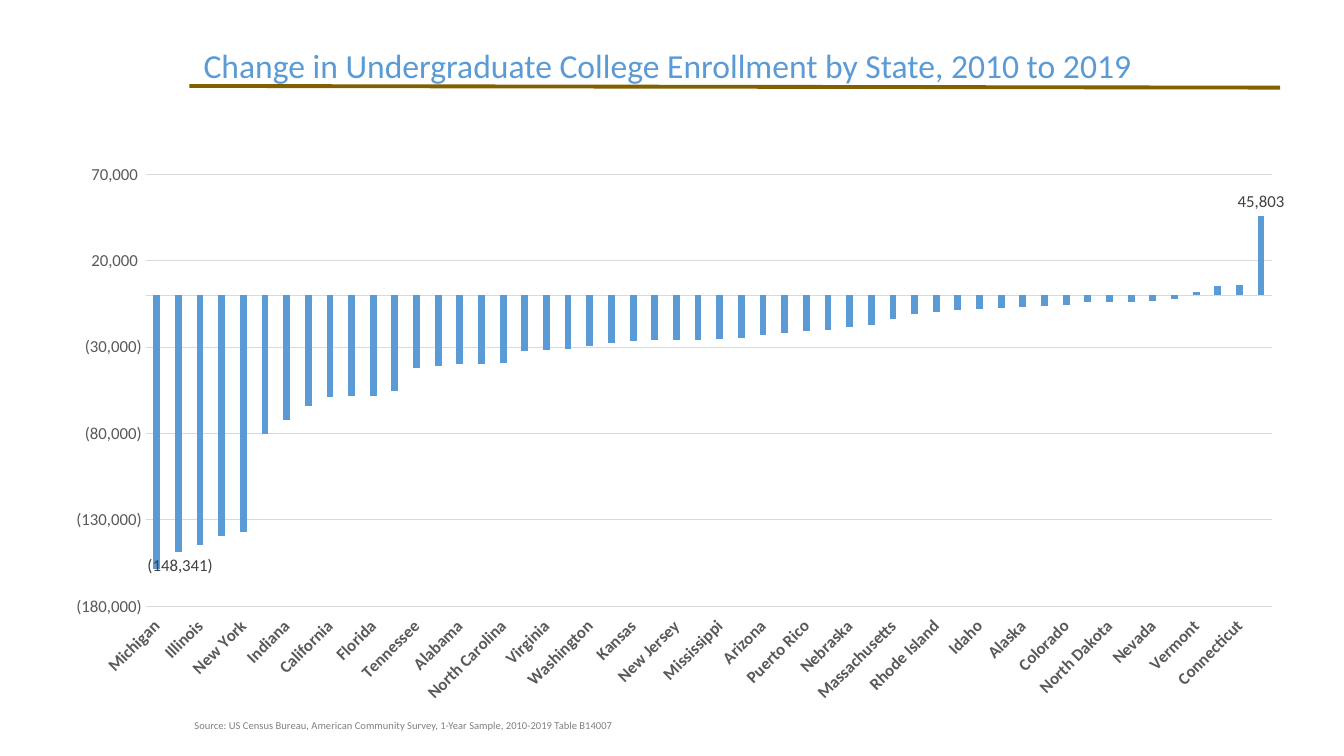
from lxml import etree
from pptx import Presentation
from pptx.chart.data import CategoryChartData
from pptx.dml.color import RGBColor
from pptx.enum.chart import (XL_CHART_TYPE, XL_LABEL_POSITION, XL_TICK_LABEL_POSITION,
                             XL_TICK_MARK)
from pptx.enum.shapes import MSO_CONNECTOR
from pptx.enum.text import MSO_ANCHOR, PP_ALIGN
from pptx.oxml import parse_xml
from pptx.oxml.ns import nsdecls, qn
from pptx.util import Pt

COLUMN = XL_CHART_TYPE.COLUMN_CLUSTERED
OUTSIDE = XL_LABEL_POSITION.OUTSIDE_END
LOW = XL_TICK_LABEL_POSITION.LOW
NO_TICK = XL_TICK_MARK.NONE
STRAIGHT = MSO_CONNECTOR.STRAIGHT
MIDDLE, LEFT = MSO_ANCHOR.MIDDLE, PP_ALIGN.LEFT

FONT = "Calibri"
BLUE, GOLD, GRID, AXIS, LABEL, SOURCE = "5B9BD5", "806000", "D9D9D9", "595959", "404040", "808080"
NUMBER_FORMAT = r'_(* #,##0_);_(* \(#,##0\);_(* "-"??_);_('
LABELLED = ("Pennsylvania", "Texas")

ENROLLMENT_CHANGE = {
    "Michigan": -158669, "Pennsylvania": -148341, "Illinois": -144688, "Ohio": -139584,
    "New York": -136700, "Missouri": -80359, "Indiana": -72352, "Minnesota": -63898,
    "California": -58865, "Wisconsin": -58341, "Florida": -58186, "Maryland": -55631,
    "Tennessee": -41985, "Georgia": -40846, "Alabama": -40001, "South Carolina": -39846,
    "North Carolina": -39470, "Oregon": -32197, "Virginia": -31666, "Oklahoma": -30966,
    "Washington": -29483, "Kentucky": -27358, "Kansas": -26217, "West Virginia": -25807,
    "New Jersey": -25658, "Iowa": -25616, "Mississippi": -25223, "New Mexico": -24777,
    "Arizona": -22903, "Arkansas": -21648, "Puerto Rico": -20970, "Louisiana": -19963,
    "Nebraska": -18534, "Hawaii": -17294, "Massachusetts": -13616, "Maine": -10666,
    "Rhode Island": -9920, "Montana": -8532, "Idaho": -7702, "Delaware": -7298,
    "Alaska": -6906, "South Dakota": -6252, "Colorado": -5921, "New Hampshire": -4078,
    "North Dakota": -4075, "Wyoming": -3716, "Nevada": -3425, "District of Columbia": -1960,
    "Vermont": 1855, "Utah": 5401, "Connecticut": 5684, "Texas": 45803,
}


def rgb(color):
    return RGBColor.from_string(color)


def set_font(font, size, color, bold=False):
    font.name, font.size, font.bold = FONT, Pt(size), bold
    font.color.rgb = rgb(color)


def set_line(line, color, width):
    line.color.rgb = rgb(color)
    line.width = Pt(width)


def add_title(s, x, y, w, h, text):
    sp = s.shapes.title
    sp.left, sp.top, sp.width, sp.height = Pt(x), Pt(y), Pt(w), Pt(h)
    tf = sp.text_frame
    tf.vertical_anchor = MIDDLE
    p = tf.paragraphs[0]
    p.alignment, p.line_spacing = LEFT, 0.9
    r = p.add_run()
    r.text = text
    set_font(r.font, 24, BLUE)
    rule = s.shapes.add_connector(STRAIGHT, Pt(x - 2.9), Pt(y + 65.2), Pt(x + 776.2), Pt(y + 66.4))
    set_line(rule.line, GOLD, 2.75)
    etree.SubElement(rule._element.spPr, qn("a:effectLst"))


def set_plot_area(chart, x, y, w, h):
    """Place the inner plot area, in fractions of the chart's box."""
    plot_area = chart._chartSpace.chart.plotArea
    for old in plot_area.findall(qn("c:layout")):
        plot_area.remove(old)
    places = "".join(f'<c:{tag} val="{val:.5f}"/>' for tag, val in zip("xywh", (x, y, w, h)))
    plot_area.insert(0, parse_xml(
        f'<c:layout {nsdecls("c")}><c:manualLayout><c:layoutTarget val="inner"/>'
        f'<c:xMode val="edge"/><c:yMode val="edge"/>{places}</c:manualLayout></c:layout>'))


def style_axes(chart):
    states, change = chart.category_axis, chart.value_axis
    for axis in (states, change):
        axis.major_tick_mark = axis.minor_tick_mark = NO_TICK
        set_font(axis.tick_labels.font, 12, AXIS, bold=axis is states)
    states.tick_label_position = LOW
    states.has_major_gridlines = False
    set_line(states.format.line, GRID, 0.75)
    slant = states._element.find(qn("c:txPr")).find(qn("a:bodyPr"))
    slant.set("rot", "-2700000")
    slant.set("vert", "horz")

    change.minimum_scale, change.maximum_scale, change.major_unit = -180000, 70000, 50000
    change.tick_labels.number_format = NUMBER_FORMAT
    change.tick_labels.number_format_is_linked = False
    change.format.line.fill.background()
    set_line(change.major_gridlines.format.line, GRID, 0.75)


def add_change_chart(s, x, y, w, h):
    data = CategoryChartData(number_format=NUMBER_FORMAT)
    data.categories = list(ENROLLMENT_CHANGE)
    data.add_series("Series 1", list(ENROLLMENT_CHANGE.values()))
    chart = s.shapes.add_chart(COLUMN, Pt(x), Pt(y), Pt(w), Pt(h), data).chart
    chart.has_title = chart.has_legend = False
    set_font(chart.font, 10, "000000")
    set_plot_area(chart, 70.4 / w, 15.1 / h, 804.4 / w, 308.7 / h)
    style_axes(chart)

    plot = chart.plots[0]
    plot.gap_width, plot.overlap, plot.vary_by_categories = 219, -27, False
    series = plot.series[0]
    series.invert_if_negative = False
    series.format.fill.solid()
    series.format.fill.fore_color.rgb = rgb(BLUE)
    for i, state in enumerate(ENROLLMENT_CHANGE):
        if state in LABELLED:
            label = series.points[i].data_label
            set_font(label.font, 12, LABEL)
            label.position = OUTSIDE


def add_source(s, x, y, w, h, text):
    tf = s.shapes.add_textbox(Pt(x), Pt(y), Pt(w), Pt(h)).text_frame
    tf.word_wrap = True
    r = tf.paragraphs[0].add_run()
    r.text = text
    set_font(r.font, 7.5, SOURCE)


def main():
    prs = Presentation()
    prs.slide_width, prs.slide_height = Pt(960), Pt(540)
    s = prs.slides.add_slide(prs.slide_layouts[5])
    add_title(s, 138.2, -3.8, 828, 104.4,
              "Change in Undergraduate College Enrollment by State, 2010 to 2019")
    add_change_chart(s, 33.8, 109.4, 892, 401)
    add_source(s, 131.8, 509.8, 378, 16.6,
               "Source: US Census Bureau, American Community Survey, 1-Year Sample, "
               "2010-2019 Table B14007")
    prs.save("out.pptx")


if __name__ == "__main__":
    main()
